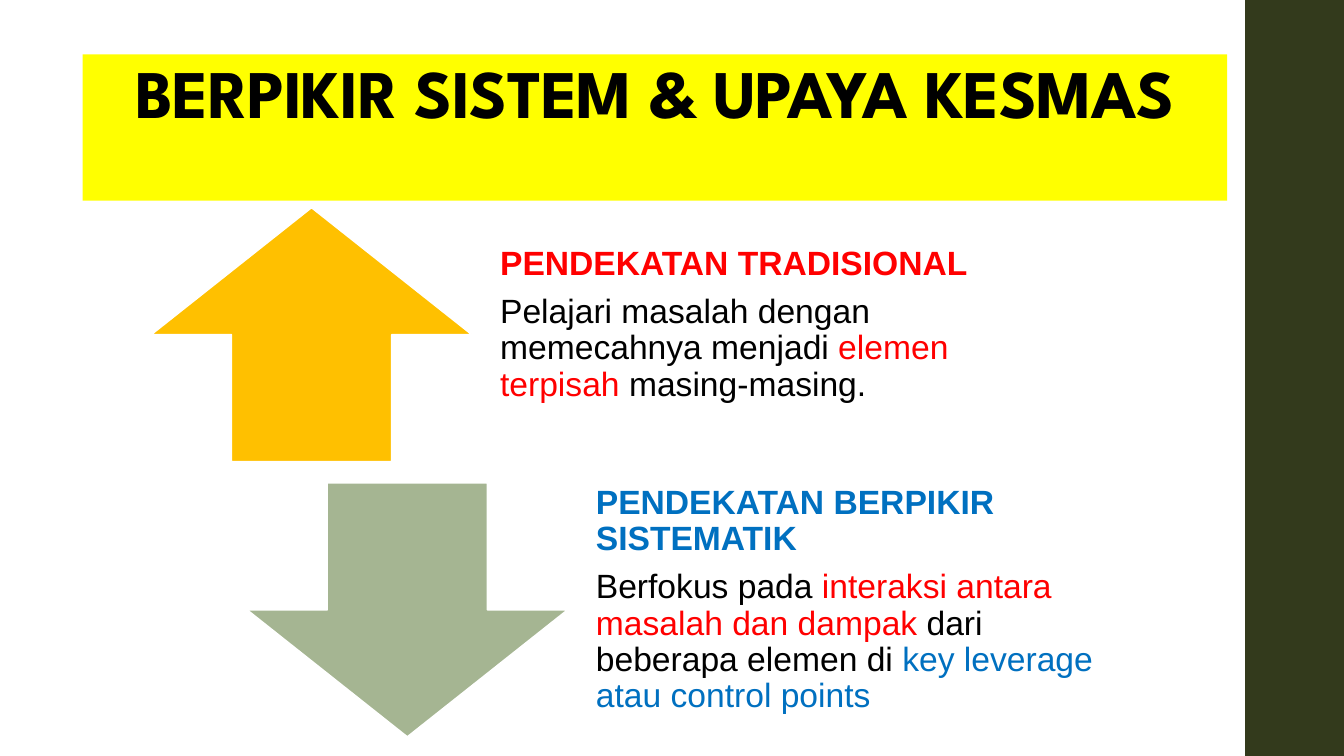
"""Build the slide that contrasts the traditional and the systems approach."""
import pptx
import pptx.dml.color
import pptx.enum.shapes
import pptx.enum.text
import pptx.util

Inches, Pt = pptx.util.Inches, pptx.util.Pt
SHAPES = pptx.enum.shapes.MSO_SHAPE
ANCHOR = pptx.enum.text.MSO_ANCHOR
BLACK, RED, BLUE = "000000", "FF0000", "0070C0"

deck = pptx.Presentation()
deck.slide_width, deck.slide_height = Inches(13.33), Inches(7.5)
slide = deck.slides.add_slide(deck.slide_layouts[6])


def paint(color_format, hex_color):
    color_format.rgb = pptx.dml.color.RGBColor.from_string(hex_color)


def add_block(preset, left, top, width, height, fill):
    block = slide.shapes.add_shape(
        preset, Inches(left), Inches(top), Inches(width), Inches(height))
    block.shadow.inherit = False
    block.fill.solid()
    paint(block.fill.fore_color, fill)
    block.line.fill.background()
    return block


add_block(SHAPES.RECTANGLE, 12.35, 0, 13.33 - 12.35, 7.5, "333A1C")

arrow_width, row_height, text_width = 3.18, 2.52, 5.39
first_left, first_top, step_right, step_down = 1.5, 2.06, 0.95, 2.73
text_offset = arrow_width + 0.09
caption_format = {
    "word_wrap": True, "vertical_anchor": ANCHOR.MIDDLE,
    "margin_left": Inches(0.19), "margin_top": 0,
    "margin_right": Inches(0.19), "margin_bottom": Inches(0.19),
}
approaches = [
    (SHAPES.UP_ARROW, "FFC000", "PENDEKATAN TRADISIONAL", RED, [
        ("Pelajari masalah dengan memecahnya menjadi ", BLACK),
        ("elemen terpisah ", RED),
        ("masing-masing.", BLACK)]),
    (SHAPES.DOWN_ARROW, "A5B592", "PENDEKATAN BERPIKIR SISTEMATIK", BLUE, [
        ("Berfokus pada ", BLACK),
        ("interaksi antara masalah dan dampak ", RED),
        ("dari beberapa elemen di ", BLACK),
        ("key leverage atau control points", BLUE)]),
]

for row, (preset, fill, heading, heading_color, phrases) in enumerate(approaches):
    left = first_left + row * step_right
    top = first_top + row * step_down
    arrow = add_block(preset, left, top, arrow_width, row_height, fill)
    paint(arrow.line.color, "FFFFFF")
    arrow.line.width = Pt(1.1)

    caption = slide.shapes.add_textbox(
        Inches(left + text_offset), Inches(top), Inches(text_width), Inches(row_height)).text_frame
    for setting, value in caption_format.items():
        setattr(caption, setting, value)
    heading_line, explanation = caption.paragraphs[0], caption.add_paragraph()
    for paragraph, parts, bold in (
            (heading_line, [(heading, heading_color)], True),
            (explanation, phrases, False)):
        paragraph.line_spacing = 0.9
        paragraph.space_after = Pt(24 * 0.35)
        for words, color in parts:
            phrase = paragraph.add_run()
            phrase.text = words
            for setting, value in {"name": "Arial", "size": Pt(24), "bold": bold}.items():
                setattr(phrase.font, setting, value)
            paint(phrase.font.color, color)

banner = add_block(SHAPES.RECTANGLE, 0.82, 0.54, 11.35, 1.45, "FFFF00").text_frame
banner.word_wrap = True
banner.vertical_anchor = ANCHOR.TOP
title_line = banner.paragraphs[0]
title_line.alignment = pptx.enum.text.PP_ALIGN.CENTER
title_line.line_spacing = 0.9
title = title_line.add_run()
title.text = "BERPIKIR SISTEM & UPAYA KESMAS"
for setting, value in {"name": "League Spartan", "size": Pt(48.6), "bold": True}.items():
    setattr(title.font, setting, value)
paint(title.font.color, BLACK)
title._r.get_or_add_rPr().set("spc", "-50")

deck.save("out.pptx")
